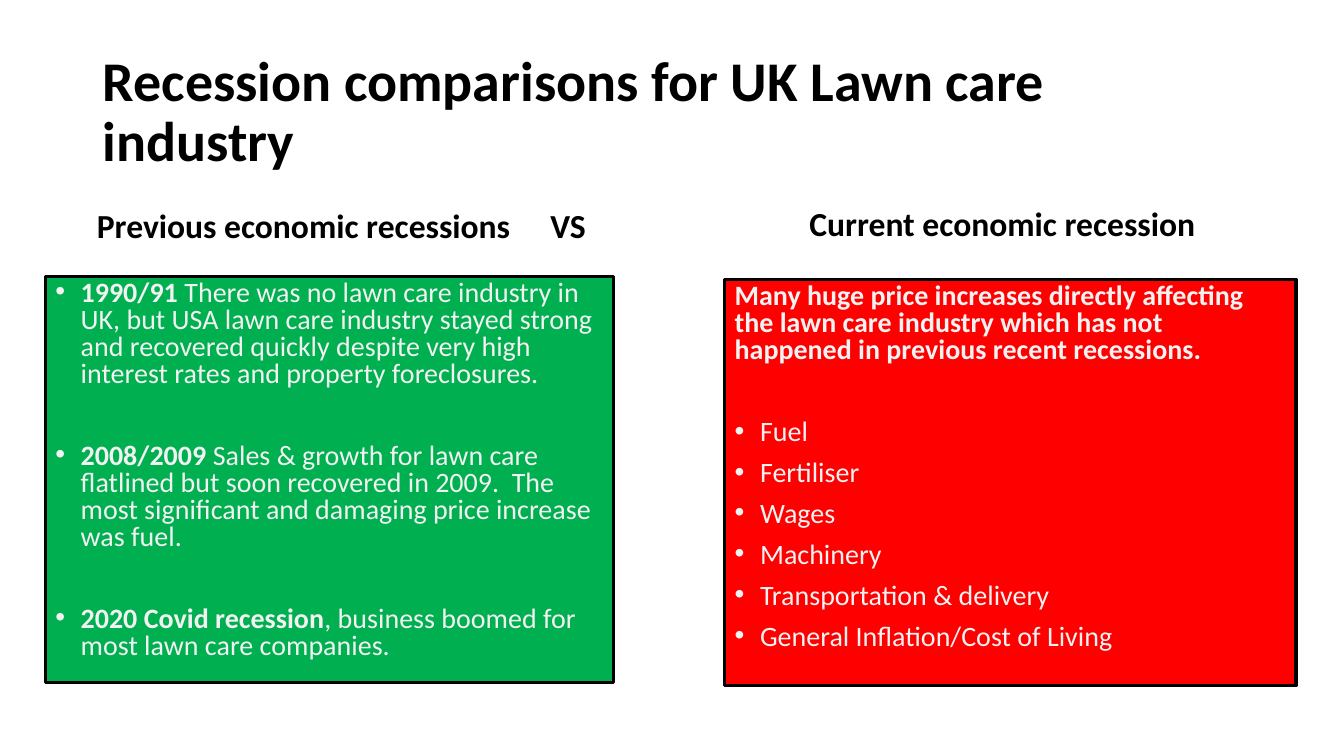
from lxml.etree import SubElement
from pptx import Presentation
from pptx.dml.color import RGBColor
from pptx.enum.text import MSO_ANCHOR, MSO_AUTO_SIZE, PP_ALIGN
from pptx.oxml.ns import qn
from pptx.util import Cm, Pt

COLOURS = {"black": "000000", "text": "F2F2F2", "green": "00B050", "red": "FF0000"}
GAP, WIDE_GAP = 10, 39.5  # points above a paragraph


def place(area, left, top, width, height, anchor):
    area.left, area.top, area.width, area.height = Cm(left), Cm(top), Cm(width), Cm(height)
    frame = area.text_frame
    frame.word_wrap = True
    frame.auto_size = MSO_AUTO_SIZE.NONE
    frame.vertical_anchor = anchor
    return frame


def style(paragraph, size, colour, bold, spacing, gap, align=PP_ALIGN.LEFT):
    paragraph.alignment = align
    paragraph.line_spacing = spacing
    paragraph.space_before = Pt(gap)
    font = paragraph.font
    font.name, font.size, font.bold = "Calibri", Pt(size), bold
    font.color.rgb = RGBColor.from_string(COLOURS[colour])


presentation = Presentation()
presentation.slide_width, presentation.slide_height = Cm(33.87), Cm(19.05)
slide = presentation.slides.add_slide(presentation.slide_layouts[4])
title, previous_heading, previous, current_heading, current = slide.placeholders

# Title
title_frame = place(title, 2.34, 1.02, 29.21, 3.68, MSO_ANCHOR.MIDDLE)
title_frame.text = "Recession comparisons for UK Lawn care industry"
style(title_frame.paragraphs[0], 40, "black", True, 0.9, 0)

# Column headings, with VS set on a tab stop
headings = [
    (previous_heading, 1.7, 4.04, 16.99, "Previous economic recessions\tVS", PP_ALIGN.LEFT),
    (current_heading, 18.06, 3.99, 14.4, "Current economic recession", PP_ALIGN.CENTER),
]
for heading, left, top, width, wording, align in headings:
    heading_frame = place(heading, left, top, width, 2.29, MSO_ANCHOR.BOTTOM)
    heading_frame.text = wording
    style(heading_frame.paragraphs[0], 24, "black", True, 0.9, GAP, align)

previous_frame = previous_heading.text_frame
previous_frame.margin_left = Cm(0.74)
properties = previous_frame.paragraphs[0]._p.get_or_add_pPr()
tabs = properties.makeelement(qn("a:tabLst"), {})
SubElement(tabs, qn("a:tab"), pos=str(Cm(13.46)), algn="l")
properties.find(qn("a:defRPr")).addprevious(tabs)

# Coloured panels: each entry is bold lead, plain text, bulleted, gap above
previous_points = [
    ("1990/91", " There was no lawn care industry in UK, but USA lawn care industry stayed "
     "strong and recovered quickly despite very high interest rates and property "
     "foreclosures.", True, GAP),
    ("2008/2009", " Sales & growth for lawn care flatlined but soon recovered in 2009.  The "
     "most significant and damaging price increase was fuel.", True, WIDE_GAP),
    ("2020 Covid recession", ", business boomed for most lawn care companies.", True, WIDE_GAP),
]
current_points = [
    ("Many huge price increases directly affecting the lawn care industry which has not "
     "happened in previous recent recessions.", "", False, GAP),
    ("", "Fuel", True, WIDE_GAP),
]
for cost in ["Fertiliser", "Wages", "Machinery", "Transportation & delivery",
             "General Inflation/Cost of Living"]:
    current_points.append(("", cost, True, GAP))

panels = [
    (previous, 1.14, 6.96, 14.33, "green", previous_points),
    (current, 18.26, 7.04, 14.4, "red", current_points),
]
for panel, left, top, width, colour, points in panels:
    panel_frame = place(panel, left, top, width, 10.24, MSO_ANCHOR.TOP)
    panel.fill.solid()
    panel.fill.fore_color.rgb = RGBColor.from_string(COLOURS[colour])
    panel.line.color.rgb = RGBColor.from_string(COLOURS["black"])
    panel.line.width = Pt(2.25)
    for number, (lead, detail, bulleted, gap) in enumerate(points):
        point = panel_frame.add_paragraph() if number else panel_frame.paragraphs[0]
        style(point, 20, "text", not detail, 0.8, gap)
        for wording, bold in [(lead, True), (detail, False)]:
            if wording:
                run = point.add_run()
                run.text = wording
                run.font.bold = bold
        # Bullet and hanging indent
        properties = point._p.get_or_add_pPr()
        indent = Cm(0.64) if bulleted else 0
        properties.set("marL", str(indent))
        properties.set("indent", str(-indent))
        if bulleted:
            bullet = properties.makeelement(qn("a:buChar"), {"char": "•"})
        else:
            bullet = properties.makeelement(qn("a:buNone"), {})
        properties.find(qn("a:defRPr")).addprevious(bullet)

presentation.save("out.pptx")
